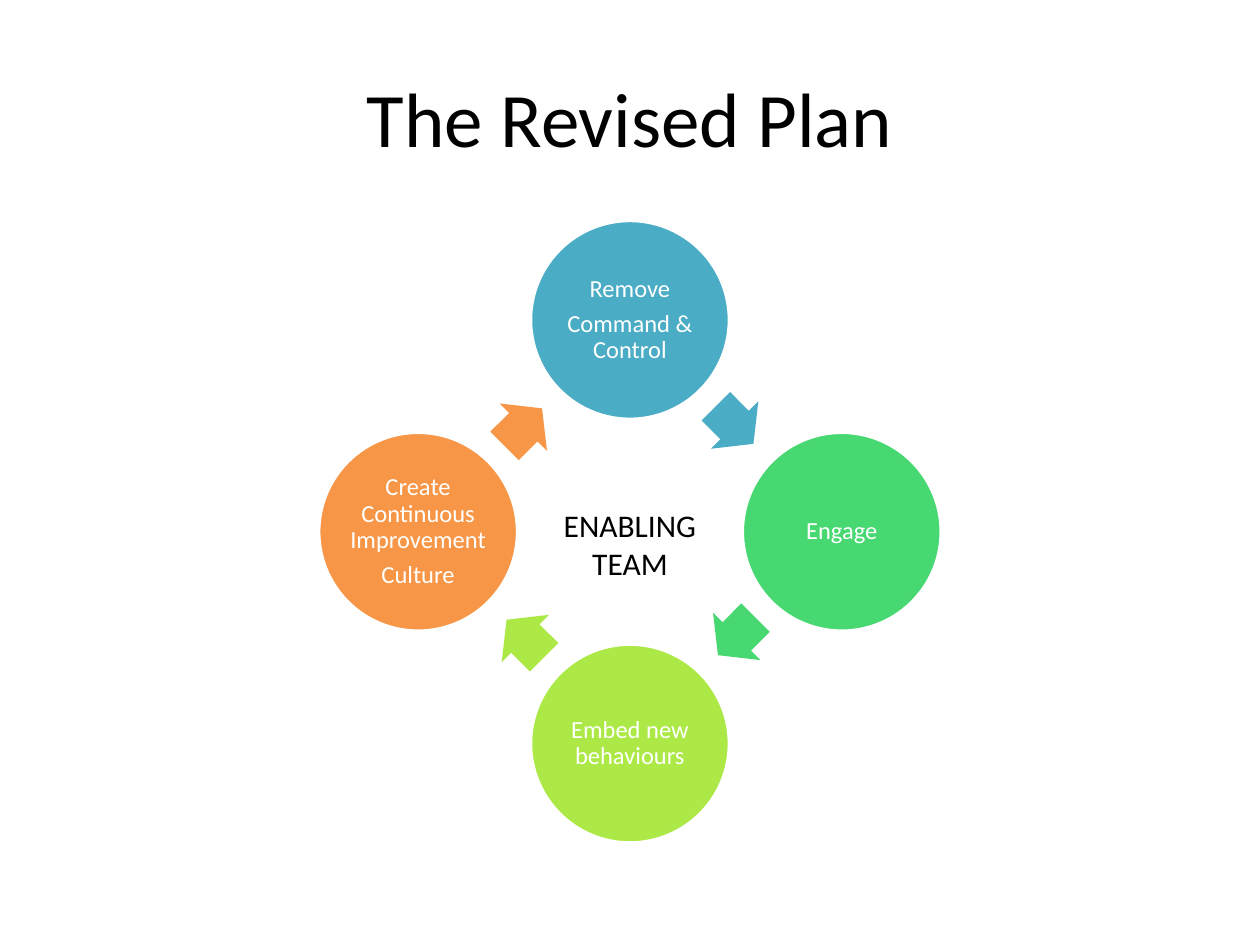
from dataclasses import dataclass
from math import cos, radians, sin
from typing import Any

from pptx import Presentation
from pptx.dml.color import RGBColor
from pptx.enum.shapes import MSO_SHAPE
from pptx.enum.text import MSO_ANCHOR, PP_ALIGN
from pptx.util import Cm, Pt

FONT = "Calibri"
WHITE = "FFFFFF"
BLACK = "000000"
CENTER_X, CENTER_Y = 12.7, 10.72
RING_RADIUS = 4.27
CIRCLE_SIZE = 4.01
ARROW_WIDTH, ARROW_HEIGHT = 1.07, 1.35
ARROW_X, ARROW_Y = 2.11, -2.15
MARGINS = ("margin_left", "margin_top", "margin_right", "margin_bottom")


@dataclass(frozen=True)
class Stage:
    paragraphs: tuple[str, ...]
    color: str


STAGES = (
    Stage(("Remove", "Command & Control"), "4BACC6"),
    Stage(("Engage",), "47D872"),
    Stage(("Embed new behaviours",), "ACE946"),
    Stage(("Create Continuous Improvement", "Culture"), "F79646"),
)


def color_from(value: str) -> RGBColor:
    return RGBColor.from_string(value)


def apply_format(target: Any, values: dict[str, Any]) -> None:
    for name, value in values.items():
        setattr(target, name, value)


def write_text(shape: Any, lines: tuple[str, ...], size: float, color: str,
               frame_format: dict[str, Any],
               paragraph_format: dict[str, Any] | None = None) -> None:
    frame = shape.text_frame
    frame.text = "\n".join(lines)
    apply_format(frame, {"word_wrap": True, **frame_format})
    for paragraph in frame.paragraphs:
        apply_format(paragraph, {"alignment": PP_ALIGN.CENTER, **(paragraph_format or {})})
        for run in paragraph.runs:
            apply_format(run.font, {"name": FONT, "size": Pt(size)})
            run.font.color.rgb = color_from(color)


def add_centered(slide: Any, kind: MSO_SHAPE, x: float, y: float,
                 width: float, height: float, fill: str) -> Any:
    shape = slide.shapes.add_shape(
        kind, Cm(x - width / 2), Cm(y - height / 2), Cm(width), Cm(height))
    shape.shadow.inherit = False
    shape.fill.solid()
    shape.fill.fore_color.rgb = color_from(fill)
    return shape


def turn(x: float, y: float, degrees: float) -> tuple[float, float]:
    angle = radians(degrees)
    return (CENTER_X + x * cos(angle) - y * sin(angle),
            CENTER_Y + x * sin(angle) + y * cos(angle))


def add_circle(slide: Any, stage: Stage, degrees: float) -> None:
    circle = add_centered(slide, MSO_SHAPE.OVAL, *turn(0, -RING_RADIUS, degrees),
                          CIRCLE_SIZE, CIRCLE_SIZE, stage.color)
    circle.line.color.rgb = color_from(WHITE)
    circle.line.width = Pt(2)
    write_text(circle, stage.paragraphs, 14, WHITE,
               {"vertical_anchor": MSO_ANCHOR.MIDDLE, **dict.fromkeys(MARGINS, Cm(0.05))},
               {"line_spacing": 0.9, "space_after": Pt(4.9)})


def add_arrow(slide: Any, stage: Stage, degrees: float) -> None:
    arrow = add_centered(slide, MSO_SHAPE.RIGHT_ARROW, *turn(ARROW_X, ARROW_Y, degrees),
                         ARROW_WIDTH, ARROW_HEIGHT, stage.color)
    arrow.line.fill.background()
    arrow.adjustments[0] = 0.6
    arrow.adjustments[1] = 0.5
    arrow.rotation = degrees + 45


def main() -> None:
    presentation = Presentation()
    apply_format(presentation, {"slide_width": Cm(25.4), "slide_height": Cm(19.05)})
    slide = presentation.slides.add_slide(presentation.slide_layouts[5])

    title = slide.shapes.title
    apply_format(title, {"left": Cm(1.27), "top": Cm(0.76),
                         "width": Cm(22.86), "height": Cm(3.18)})
    write_text(title, ("The Revised Plan",), 44, BLACK,
               {"vertical_anchor": MSO_ANCHOR.MIDDLE})

    for index, stage in enumerate(STAGES):
        degrees = index * 360 / len(STAGES)
        add_circle(slide, stage, degrees)
        add_arrow(slide, stage, degrees)

    team_label = slide.shapes.add_textbox(Cm(10.5), Cm(8.53), Cm(4.4), Cm(3.33))
    write_text(team_label, ("ENABLING TEAM",), 18, BLACK,
               {"vertical_anchor": MSO_ANCHOR.BOTTOM})

    presentation.save("out.pptx")


if __name__ == "__main__":
    main()
